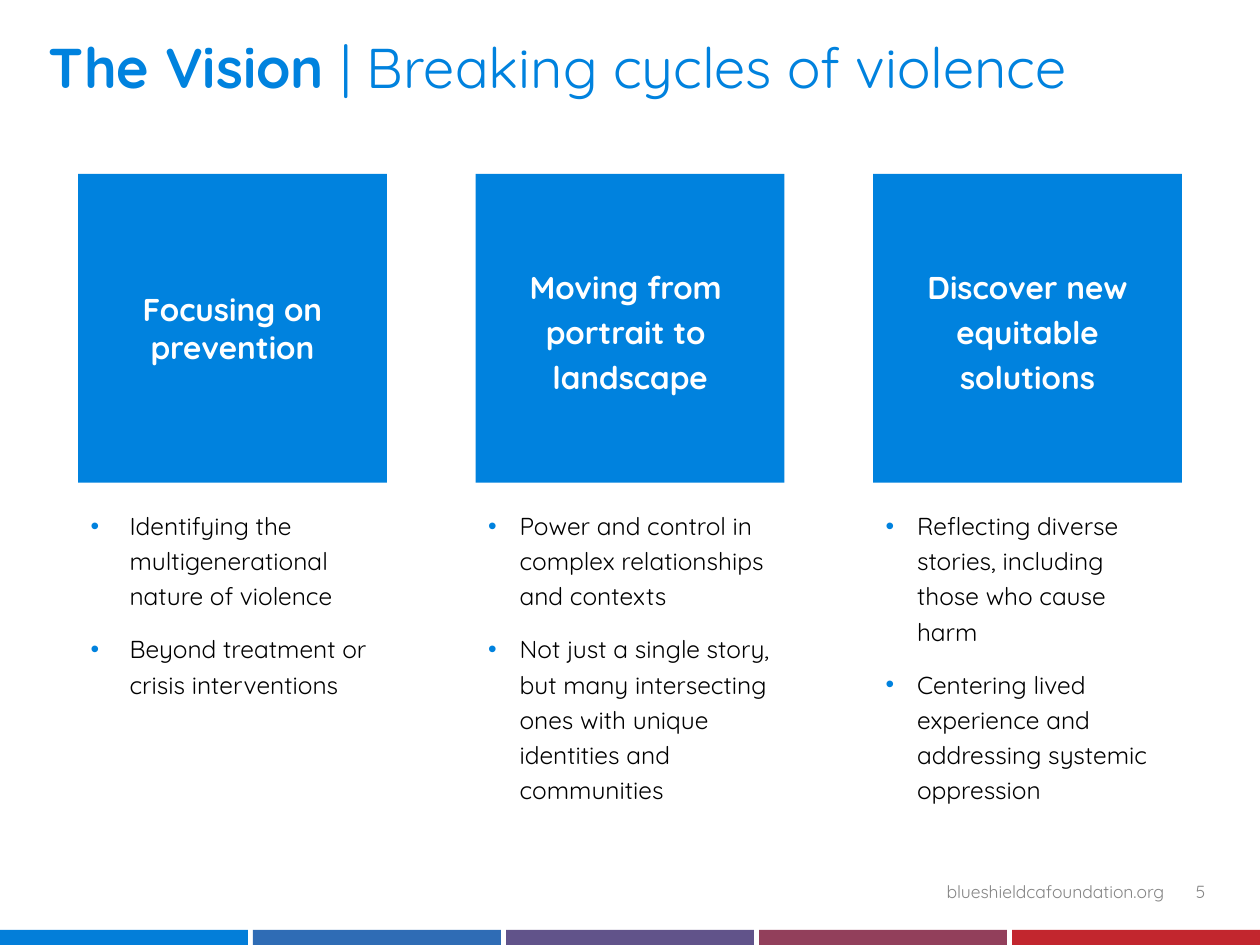
from lxml import etree
from pptx import Presentation
from pptx.dml.color import RGBColor
from pptx.enum.shapes import MSO_SHAPE
from pptx.enum.text import MSO_ANCHOR, PP_ALIGN
from pptx.oxml.ns import qn
from pptx.util import Inches, Pt

RECT = MSO_SHAPE.RECTANGLE
TOP, MIDDLE = MSO_ANCHOR.TOP, MSO_ANCHOR.MIDDLE
LEFT, CENTER, RIGHT = PP_ALIGN.LEFT, PP_ALIGN.CENTER, PP_ALIGN.RIGHT
BLUE = RGBColor(0x00, 0x82, 0xDE)
BLACK = RGBColor(0, 0, 0)
WHITE = RGBColor(0xFF, 0xFF, 0xFF)
GRAY = RGBColor(0x85, 0x85, 0x85)
BARS = [RGBColor(0x03, 0x7E, 0xD9), RGBColor(0x2F, 0x6C, 0xB5),
        RGBColor(0x61, 0x53, 0x8A), RGBColor(0x92, 0x3F, 0x5B),
        RGBColor(0xC2, 0x26, 0x2E)]

WIDTH, HEIGHT = 10, 7.5
SIDE = 2.45
EDGE = 0.62
STEP = (WIDTH - 2 * EDGE - SIDE) / 2
GAP = 0.04
BAR = (WIDTH - GAP * (len(BARS) - 1)) / len(BARS)
THICK = 0.12

# heading, line spacing, bullet indent, points
THEMES = [
    ("Focusing on prevention", 1.0, 0.31,
     ["Identifying the multigenerational nature of violence",
      "Beyond treatment or crisis interventions"]),
    ("Moving from \vportrait to \vlandscape", 1.2, 0.25,
     ["Power and control in complex relationships and contexts",
      "Not just a single story, but many intersecting ones with unique "
      "identities and communities"]),
    ("Discover new equitable solutions", 1.2, 0.25,
     ["Reflecting diverse stories, including those who cause harm",
      "Centering lived experience and addressing systemic oppression"]),
]

deck = Presentation()
deck.slide_width, deck.slide_height = Inches(WIDTH), Inches(HEIGHT)
slide = deck.slides.add_slide(deck.slide_layouts[6])


def block(left, top, width, height, fill=None):
    """Add a filled rectangle, or a text box when there is no fill."""
    area = [Inches(n) for n in (left, top, width, height)]
    if fill is None:
        shape = slide.shapes.add_textbox(*area)
    else:
        shape = slide.shapes.add_shape(RECT, *area)
        shape.shadow.inherit = False
        shape.fill.solid()
        shape.fill.fore_color.rgb = fill
        shape.line.fill.background()
    shape.text_frame.word_wrap = True
    return shape.text_frame


def write(frame, texts, size, color, align=LEFT, space=1.0, bold=False, indent=0):
    """Write one paragraph per text, with bullets when indent is set."""
    for row, text in enumerate(texts):
        para = frame.paragraphs[0] if row == 0 else frame.add_paragraph()
        para.text = text
        para.alignment, para.line_spacing = align, space
        if row:
            para.space_before = Pt(10)
        if indent:
            props = para._p.get_or_add_pPr()
            props.set("marL", str(Inches(indent)))
            props.set("indent", str(-Inches(indent)))
            tint = etree.SubElement(props, qn("a:buClr"))
            etree.SubElement(tint, qn("a:srgbClr")).set("val", str(BLUE))
            etree.SubElement(props, qn("a:buFont")).set("typeface", "Arial")
            etree.SubElement(props, qn("a:buChar")).set("char", "•")
        for run in para.runs:
            look = {"name": "Quicksand", "size": Pt(size), "bold": bold}
            for key, value in look.items():
                setattr(run.font, key, value)
            run.font.color.rgb = color


# Colour strip along the foot
for col, color in enumerate(BARS):
    block(col * (BAR + GAP), HEIGHT - THICK, BAR, THICK, color)

# Footer address and page number
for left, width, text, align in [(6.01, 3.23, "blueshieldcafoundation.org", RIGHT),
                                 (9.49, 0.39, "5", LEFT)]:
    frame = block(left, 6.99, width, 0.17)
    for side in ("left", "top", "right", "bottom"):
        setattr(frame, "margin_" + side, 0)
    write(frame, [text], 10, GRAY, align)

# Title, bold lead and regular rest
title = block(0.29, 0.27, 9.35, 0.98)
title.vertical_anchor = TOP
write(title, ["The Vision "], 32, BLUE, space=0.9, bold=True)
rest = title.paragraphs[0].add_run()
rest.text = "| Breaking cycles of violence"
for key, value in {"name": "Quicksand", "size": Pt(32), "bold": False}.items():
    setattr(rest.font, key, value)
rest.font.color.rgb = BLUE

# Three themes, each a square with its points below
for col, (head, space, indent, points) in enumerate(THEMES):
    left = EDGE + col * STEP
    write(block(left, 3.96, SIDE, 2.27), points, 14, BLACK, space=1.2, indent=indent)
    square = block(left, 1.38, SIDE, SIDE, BLUE)
    square.vertical_anchor = MIDDLE
    write(square, [head], 18, WHITE, CENTER, space, True)

deck.save("out.pptx")
